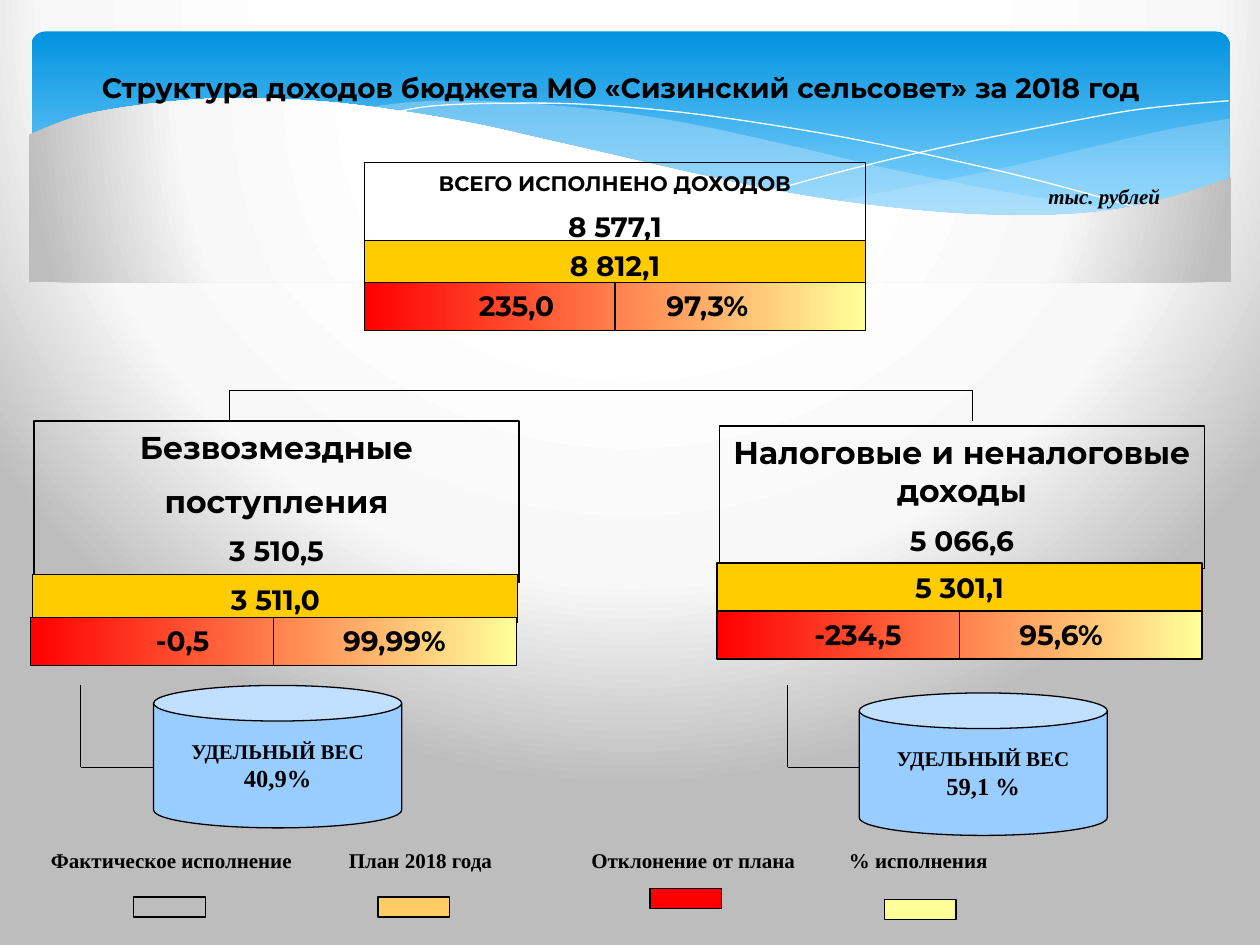
from dataclasses import dataclass
from typing import NamedTuple

from lxml import etree
from pptx import Presentation
from pptx.dml.color import RGBColor
from pptx.enum.shapes import MSO_CONNECTOR, MSO_SHAPE
from pptx.enum.text import MSO_ANCHOR, MSO_AUTO_SIZE, PP_ALIGN
from pptx.oxml.ns import qn
from pptx.util import Pt

RECTANGLE, ROUNDED, CAN = MSO_SHAPE.RECTANGLE, MSO_SHAPE.ROUNDED_RECTANGLE, MSO_SHAPE.CAN
STRAIGHT = MSO_CONNECTOR.STRAIGHT
TOP, MIDDLE = MSO_ANCHOR.TOP, MSO_ANCHOR.MIDDLE
LEFT, CENTER = PP_ALIGN.LEFT, PP_ALIGN.CENTER
TOP_SIDE, BOTTOM_SIDE = 0, 2
TITLE_ONLY = 5


@dataclass(frozen=True)
class Theme:
    sans: str = "Montserrat"
    serif: str = "Times New Roman"
    ink: str = "000000"
    white: str = "FFFFFF"
    wave: str = "C6E7FC"
    plan: str = "FFCC00"
    plan_key: str = "FFCC66"
    deviation: str = "FF0000"
    percent: str = "FFFF99"
    can: str = "99CCFF"
    sky: tuple = ((0, "0293E0"), (90, "83D3FE"))
    haze: tuple = ((40, "FFFFFF"), (74, "F8F8F8"), (100, "BDBDBD"))
    small: float = 12
    share: float = 14
    body: float = 16
    heading: float = 18
    outline: float = 0.75


THEME = Theme()


class Box(NamedTuple):
    left: float
    top: float
    width: float
    height: float


class Income(NamedTuple):
    headings: tuple
    heading_size: float
    actual: str
    plan: str
    results: tuple
    actual_box: Box
    plan_box: Box
    result_box: Box
    result_stops: tuple


class Share(NamedTuple):
    value: str
    box: Box
    stem_x: float
    elbow_y: float = 438.5


class Key(NamedTuple):
    label: str
    label_left: float
    swatch_left: float
    swatch_top: float
    color: str | None


INCOMES = (
    Income(("ВСЕГО ИСПОЛНЕНО ДОХОДОВ",), THEME.small, "8 577,1", "8 812,1", ("235,0", "97,3%"),
           Box(208.1, 92.9, 286.6, 51.8), Box(208.1, 137.5, 286.6, 27.4),
           Box(208.1, 161.3, 286.6, 27.4), (80, 189)),
    Income(("Безвозмездные", "поступления"), THEME.heading, "3 510,5", "3 511,0", ("-0,5", "99,99%"),
           Box(19.4, 240.5, 277.2, 92.2), Box(18.7, 328.3, 277.2, 27.4),
           Box(17.3, 352.8, 277.9, 27.4), (80, 201)),
    Income(("Налоговые и неналоговые доходы",), THEME.heading, "5 066,6", "5 301,1", ("-234,5", "95,6%"),
           Box(411.1, 243.4, 277.2, 81.4), Box(409.7, 321.8, 277.2, 27.4),
           Box(409.7, 349.2, 277.2, 27.4), (73.5, 189.5)),
)
SHARES = (Share("40,9%", Box(87.8, 391.7, 141.8, 81.4), 46.1),
          Share("59,1 %", Box(491, 396, 141.8, 81.4), 450))
KEYS = (Key("Фактическое исполнение", 29.2, 76.3, 512.6, None),
        Key("План 2018 года", 199.5, 216, 512.6, THEME.plan_key),
        Key("Отклонение от плана", 338, 371.5, 507.6, THEME.deviation),
        Key("% исполнения", 485.2, 505.4, 514.1, THEME.percent))

WAVE_RIGHT = [(702.7, 67.7), (663.1, 74.9), (619.9, 85), (560.9, 98.6), (475.9, 115.2)]
WAVE_RIGHT_BACK = [(475.9, 115.2), (517.7, 120.2), (562.3, 123.8), (601.2, 123.8),
                   (640.1, 119.5), (673.2, 112.3), (702.7, 101.5)]
WAVE_LONG = [(643, 120.2), (581, 110.9), (508.3, 96.5), (452.9, 83.5), (389.5, 69.8),
             (334.8, 61.9), (273.6, 57.6), (236.2, 58.3), (205.9, 61.9)]
WAVE_LONG_BACK = [(205.9, 61.9), (260.6, 69.8), (323.3, 83.5), (407.5, 103), (468, 113.8),
                  (519.8, 121), (573.1, 124.6), (610.6, 123.8), (643, 120.2)]
CREST_FALLING = [(222.5, 64.8), (247.7, 60.5), (288.7, 59), (337.7, 59.8), (400.3, 65.5),
                 (478.8, 77.8), (547.2, 92.2), (598.3, 104.4), (653, 119.5)]
CREST_RISING = [(441.4, 108.7), (483.8, 97.2), (538.6, 84.2), (601.9, 71.3), (644.4, 63.4),
                (675.4, 59.8), (702, 57.6)]
SHORE = [(703.4, 101.5), (662.4, 114.5), (621.4, 121.7), (571, 123.1), (509.8, 118.8),
         (434.2, 107.3), (321.8, 82.1), (262.8, 69.1), (195.1, 59), (139, 56.2),
         (95, 58.3), (48.2, 65.5), (16.6, 77)]


def smooth(points: list, steps: int = 6) -> list:
    """Trace a Catmull-Rom curve through the points."""
    padded = [points[0], *points, points[-1]]
    curve = [points[0]]
    for a, b, c, d in zip(padded, padded[1:], padded[2:], padded[3:]):
        for step in range(1, steps + 1):
            t = step / steps
            curve.append(tuple(
                q + (r - p) * t / 2 + (2 * p - 5 * q + 4 * r - s) * t**2 / 2
                + (3 * q - p - 3 * r + s) * t**3 / 2
                for p, q, r, s in zip(a, b, c, d)))
    return curve


def apply_gradient(fill, owner, stops: tuple, angle: int | None = None) -> None:
    """Fill the owner element along an angle, or radially when there is none."""
    fill.solid()
    gradient = etree.Element(qn("a:gradFill"), rotWithShape="1")
    stop_list = etree.SubElement(gradient, qn("a:gsLst"))
    for position, color in stops:
        stop = etree.SubElement(stop_list, qn("a:gs"), pos=str(position * 1000))
        etree.SubElement(stop, qn("a:srgbClr"), val=color)
    if angle is None:
        radial = etree.SubElement(gradient, qn("a:path"), path="circle")
        etree.SubElement(radial, qn("a:fillToRect"), l="20000", t="-40000", r="20000", b="140000")
    else:
        etree.SubElement(gradient, qn("a:lin"), ang=str(angle * 60000), scaled="0")
    owner.replace(owner.find(qn("a:solidFill")), gradient)


def paint(shape, color: str | None = None, line: str | None = None,
          width: float = THEME.outline, alpha: int | None = None) -> None:
    shape.shadow.inherit = False
    if color:
        shape.fill.solid()
        shape.fill.fore_color.rgb = RGBColor.from_string(color)
    else:
        shape.fill.background()
    if alpha is not None:
        tint = shape.element.spPr.find(qn("a:solidFill"))[0]
        etree.SubElement(tint, qn("a:alpha"), val=str(alpha * 1000))
    if line:
        shape.line.color.rgb = RGBColor.from_string(line)
        shape.line.width = Pt(width)
    else:
        shape.line.fill.background()


def add_box(page, box: Box, color: str | None = None, line: str | None = THEME.ink, kind=RECTANGLE):
    shape = page.shapes.add_shape(kind, *map(Pt, box))
    paint(shape, color, line)
    return shape


def add_curve(page, points: list, closed: bool = True):
    start, *rest = [(Pt(x), Pt(y)) for x, y in points]
    builder = page.shapes.build_freeform(*start, scale=1.0)
    builder.add_line_segments(rest, close=closed)
    return builder.convert_to_shape()


def add_line(page, x1: float, y1: float, x2: float, y2: float):
    line = page.shapes.add_connector(STRAIGHT, Pt(x1), Pt(y1), Pt(x2), Pt(y2))
    line.line.color.rgb = RGBColor.from_string(THEME.ink)
    line.line.width = Pt(THEME.outline)
    etree.SubElement(line.element.spPr, qn("a:effectLst"))
    return line


def write(shape, *lines: tuple, font: str = THEME.sans, align=CENTER, anchor=TOP, wrap: bool = True,
          italic: bool = False, spaced: bool = True, margins: tuple = (7.9, 4.3),
          tabs: tuple = (), tab_align: str = "ctr") -> None:
    """Write (text, size) lines; spaced lines are set half a type size apart."""
    frame = shape.text_frame
    frame.auto_size = MSO_AUTO_SIZE.NONE
    frame.word_wrap = wrap
    frame.vertical_anchor = anchor
    frame.margin_left = frame.margin_right = Pt(margins[0])
    frame.margin_top = frame.margin_bottom = Pt(margins[1])
    for index, (text, size) in enumerate(lines):
        para = frame.add_paragraph() if index else frame.paragraphs[0]
        para.alignment = align
        para.space_before = Pt(size / 2 if index and spaced else 0)
        if tabs:
            tab_list = etree.SubElement(para._p.get_or_add_pPr(), qn("a:tabLst"))
            for position in tabs:
                etree.SubElement(tab_list, qn("a:tab"), pos=str(Pt(position)), algn=tab_align)
        span = para.add_run()
        span.text = text
        span.font.name, span.font.size = font, Pt(size)
        span.font.bold, span.font.italic = True, italic
        span.font.color.rgb = RGBColor.from_string(THEME.ink)


def draw_backdrop(page) -> None:
    page.background.fill.solid()
    apply_gradient(page.background.fill, page.element.find(".//" + qn("p:bgPr")), THEME.haze)
    sky = add_box(page, Box(18, 18, 684.7, 112.3), line=None, kind=ROUNDED)
    sky.adjustments[0] = 0.07
    apply_gradient(sky.fill, sky.element.spPr, THEME.sky, 90)
    for upper, lower, alpha in ((WAVE_RIGHT, WAVE_RIGHT_BACK, 29), (WAVE_LONG, WAVE_LONG_BACK, 40)):
        paint(add_curve(page, smooth(upper) + smooth(lower)), THEME.wave, alpha=alpha)
    for crest in (CREST_FALLING, CREST_RISING):
        paint(add_curve(page, smooth(crest), closed=False), line=THEME.white, width=0)
    shore = add_curve(page, smooth(SHORE) + [(16.6, 161.3), (703.4, 161.3)])
    paint(shore)
    apply_gradient(shore.fill, shore.element.spPr, THEME.haze)


def draw_income(page, income: Income) -> None:
    headings = [(text, income.heading_size) for text in income.headings]
    write(add_box(page, income.actual_box), *headings, (income.actual, THEME.body))
    write(add_box(page, income.plan_box, THEME.plan), (income.plan, THEME.body))
    bar = add_box(page, income.result_box)
    apply_gradient(bar.fill, bar.element.spPr, ((0, THEME.deviation), (100, THEME.percent)), 0)
    write(bar, ("".join("\t" + value for value in income.results), THEME.body),
          align=LEFT, margins=(7.2, 3.6), tabs=income.result_stops)
    divider = add_line(page, 0, 0, 0, 0)
    divider.begin_connect(bar, TOP_SIDE)
    divider.end_connect(bar, BOTTOM_SIDE)


def draw_share(page, share: Share) -> None:
    can = add_box(page, share.box, THEME.can, kind=CAN)
    can.adjustments[0] = 0.25
    write(can, ("УДЕЛЬНЫЙ ВЕС", THEME.small), (share.value, THEME.share),
          font=THEME.serif, anchor=MIDDLE, wrap=False, spaced=False)
    add_line(page, share.stem_x, 391.7, share.stem_x, share.elbow_y)
    add_line(page, share.stem_x, share.elbow_y, share.box.left, share.elbow_y)


def draw_legend(page) -> None:
    first = KEYS[0].label_left
    labels = page.shapes.add_textbox(Pt(first - 7.2), Pt(481), Pt(660), Pt(21.6))
    write(labels, ("\t".join(key.label for key in KEYS), THEME.small), font=THEME.serif, align=LEFT,
          margins=(7.2, 3.6), tabs=tuple(key.label_left - first for key in KEYS[1:]), tab_align="l")
    for key in KEYS:
        add_box(page, Box(key.swatch_left, key.swatch_top, 41, 11.5), key.color)


def main() -> None:
    deck = Presentation()
    deck.slide_width, deck.slide_height = Pt(720), Pt(540)
    page = deck.slides.add_slide(deck.slide_layouts[TITLE_ONLY])
    draw_backdrop(page)

    title = page.shapes.title
    title.left, title.top, title.width, title.height = map(Pt, Box(30.2, 36.7, 649.4, 27.4))
    write(title, ("Структура доходов бюджета МО «Сизинский сельсовет» за 2018 год", THEME.body),
          margins=(7.2, 3.6))
    title.element.getparent().append(title.element)  # in front of the waves

    unit = page.shapes.add_textbox(*map(Pt, Box(591.1, 100.8, 92.9, 22.3)))
    write(unit, ("тыс. рублей", THEME.small), font=THEME.serif, align=LEFT, italic=True)
    for income in INCOMES:
        draw_income(page, income)
    branch_left, branch_right, branch_top = 131, 555.8, 223.2
    add_line(page, branch_left, branch_top, branch_right, branch_top)
    for x in (branch_left, branch_right):
        add_line(page, x, branch_top, x, 240.5)
    for share in SHARES:
        draw_share(page, share)
    draw_legend(page)
    deck.save("out.pptx")


if __name__ == "__main__":
    main()
